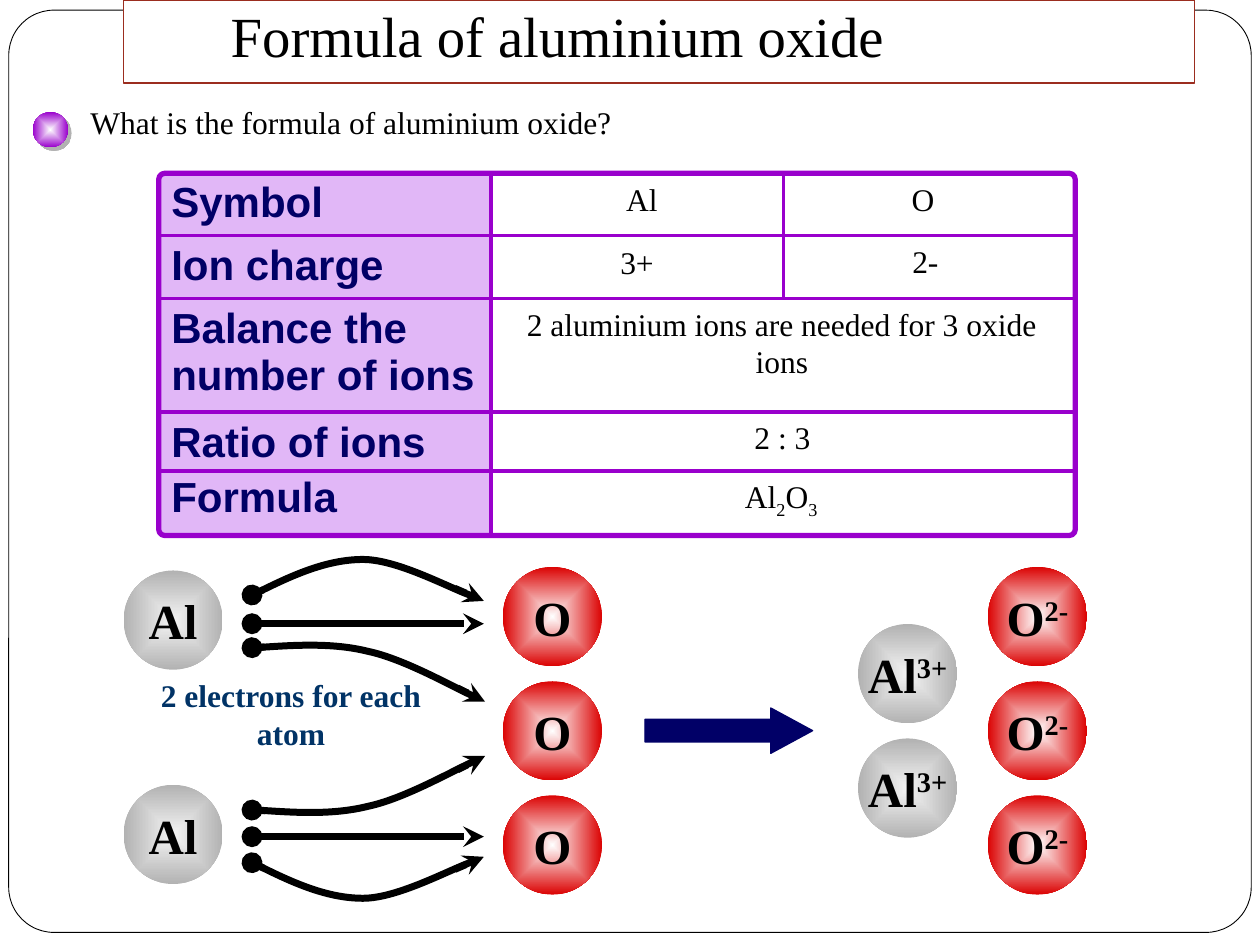
from pptx import Presentation
from pptx.dml.color import RGBColor
from pptx.enum import shapes, text
from pptx.oxml import parse_xml
from pptx.oxml.ns import nsdecls, qn
from pptx.util import Pt

THEME = dict(
    serif="Times New Roman", sans="Arial",
    black="000000", white="FFFFFF", purple="9900CC", lilac="E1B7F7",
    label="010066", arrow="010067", note="013366", title_line="9B2D1F",
    shadow="B2B2B2", red=("FFFFFF", "DB0303"), grey=("F3F3F3", "B2B2B2"),
    bullet=("FFFFFF", "9900CC"),
    title_size=32.4, body_size=18, label_size=24, ion_size=28)

# Content: runs are (text, baseline shift in percent)
TITLE = "Formula of aluminium oxide"
QUESTION = "What is the formula of aluminium oxide?"
NOTE = "2 electrons for each atom"
LABELS = [["Symbol"], ["Ion charge"], ["Balance the number of ions"],
          ["Ratio of ions", "Formula"]]
ROW_HEIGHTS = [36, 36, 65, 70]
VALUES = [  # runs, left, top, width, height
    ([("Al", 0)], 339.8, 99.4, 54, 36),
    ([("O", 0)], 500.4, 99.4, 54, 36),
    ([("3+", 0)], 337, 135.4, 54, 36),
    ([("2-", 0)], 501.8, 134.6, 54, 36),
    ([("2 aluminium ions are needed for 3 oxide ions", 0)],
     287.3, 170.6, 319, 64.8),
    ([("2 : 3", 0)], 407.5, 235.4, 79.2, 36),
    ([("Al", 0), ("2", -25), ("O", 0), ("3", -25)], 406.8, 269.3, 79.2, 36),
]
O_TOPS = [324, 389.3, 454.5]
BALLS = [  # runs, colours, left, tops
    ([("O", 0)], "red", 287.3, O_TOPS),
    ([("Al", 0)], "grey", 70.6, [326, 448.5]),
    ([("O", 0), ("2-", 30)], "red", 564.5, O_TOPS),
    ([("Al", 0), ("3+", 30)], "grey", 490.3, [356.6, 422]),
]
BALL = 56.7

# Electron paths of the upper atom; the lower atom mirrors them
MIRROR_SUM = 833
ARCS = [
    dict(start=[(144, 340), (150.5, 337)],
         curve=[(146.2, 339.1), (166.3, 329), (186.5, 319.7), (207.4, 319.7),
                (227.5, 319.7), (257, 336.2), (270, 340.6)],
         tip=[(259.9, 336.2), (276.5, 343.4)]),
    dict(start=[(144, 370.1), (151.2, 369.7)],
         curve=[(146.9, 370.1), (168.5, 368.6), (190.1, 367.2), (210.2, 372.2),
                (231.1, 376.6), (258.5, 392.4), (271.4, 398.2)],
         tip=[(261.4, 393.1), (277.2, 401)]),
]
STRAIGHT_YS = [356.4, 478.1]

# Table frame
LEFT, TOP, WIDTH, HEIGHT = 90.7, 99, 523.8, 207
LABEL_W = 190
GRID_YS = [134.6, 170.6, 235.4, 269.3]
MID_X = 447.8


def rgb(name):
    return RGBColor.from_string(THEME[name])


def write(p, runs, size, font="serif", color="black", bold=False, align="CENTER"):
    p.alignment = getattr(text.PP_ALIGN, align)
    for words, shift in runs:
        r = p.add_run()
        r.text = words
        for key, value in dict(size=Pt(size), name=THEME[font], bold=bold).items():
            setattr(r.font, key, value)
        r.font.color.rgb = rgb(color)
        if shift:
            r.font._element.set("baseline", str(shift * 1000))


def add_text(s, runs, left, top, width, height, **style):
    tf = s.shapes.add_textbox(Pt(left), Pt(top), Pt(width), Pt(height)).text_frame
    tf.word_wrap = True
    write(tf.paragraphs[0], runs, THEME["body_size"], **style)


def outline(sp, color, width):
    sp.line.color.rgb = rgb(color)
    sp.line.width = Pt(width)


def add_shape(s, kind, left, top, width, height, fill=None, line=None, adj=()):
    sp = s.shapes.add_shape(getattr(shapes.MSO_SHAPE, kind),
                            Pt(left), Pt(top), Pt(width), Pt(height))
    sp.shadow.inherit = False
    for i, value in enumerate(adj):
        sp.adjustments[i] = value
    if fill:
        sp.fill.solid()
        sp.fill.fore_color.rgb = rgb(fill)
    else:
        sp.fill.background()
    if line:
        outline(sp, *line)
    else:
        sp.line.fill.background()
    return sp


def add_ball(s, colors, left, top, size):
    sp = add_shape(s, "OVAL", left, top, size, size)
    inner, outer = THEME[colors]
    gradient = parse_xml(
        f'<a:gradFill {nsdecls("a")} rotWithShape="1"><a:gsLst>'
        f'<a:gs pos="0"><a:srgbClr val="{inner}"/></a:gs>'
        f'<a:gs pos="100000"><a:srgbClr val="{outer}"/></a:gs></a:gsLst>'
        '<a:path path="shape"><a:fillToRect l="50000" t="50000" r="50000" b="50000"/>'
        '</a:path></a:gradFill>')
    spPr = sp.element.spPr
    spPr.replace(spPr.find(qn("a:noFill")), gradient)
    return sp


def add_line(s, start, end, color, width, **ends):
    c = s.shapes.add_connector(shapes.MSO_CONNECTOR.STRAIGHT,
                               *(Pt(v) for v in (*start, *end)))
    outline(c, color, width)
    spPr = c.element.spPr
    for tag, kind in ends.items():
        spPr.find(qn("a:ln")).append(
            parse_xml(f'<a:{tag} {nsdecls("a")} type="{kind}"/>'))
    spPr.append(parse_xml(f'<a:effectLst {nsdecls("a")}/>'))


def add_curve(s, points):
    first, *rest = [(Pt(x), Pt(y)) for x, y in points]
    builder = s.shapes.build_freeform(*first)
    builder.add_line_segments(rest, close=False)
    sp = builder.convert_to_shape()
    sp.shadow.inherit = False
    sp.fill.background()
    outline(sp, "black", 4)
    # Turn each three line segments into one Bezier segment
    segments = list(sp.element.iter(qn("a:lnTo")))
    for i in range(0, len(segments), 3):
        bezier = parse_xml(f'<a:cubicBezTo {nsdecls("a")}/>')
        segments[i].addprevious(bezier)
        for seg in segments[i:i + 3]:
            bezier.append(seg[0])
            seg.getparent().remove(seg)


def main():
    prs = Presentation()
    prs.slide_width, prs.slide_height = Pt(720), Pt(540)
    s = prs.slides.add_slide(prs.slide_layouts[5])

    # Title over the page frame
    title = s.shapes.title
    page = add_shape(s, "ROUNDED_RECTANGLE", 5, 5.8, 710, 527, "white",
                     ("black", 0.5), [0.049])
    title.element.addprevious(page.element)
    for key, value in dict(left=70.6, top=0, width=612, height=47.5).items():
        setattr(title, key, Pt(value))
    title.fill.solid()
    title.fill.fore_color.rgb = rgb("white")
    outline(title, "title_line", 1)
    tf = title.text_frame
    for key, value in dict(auto_size=text.MSO_AUTO_SIZE.NONE, word_wrap=True,
                           vertical_anchor=text.MSO_ANCHOR.BOTTOM,
                           margin_bottom=Pt(8)).items():
        setattr(tf, key, value)
    p = tf.paragraphs[0]
    write(p, [(TITLE, 0)], THEME["title_size"], align="LEFT")
    pPr = p._p.get_or_add_pPr()
    pPr.set("marL", str(Pt(54)))
    pPr.set("indent", "0")

    # Question and its bullet
    add_text(s, [(QUESTION, 0)], 44.6, 55.4, 661, 36, align="LEFT")
    bullet = add_ball(s, "bullet", 18.7, 64, 20.2)
    bullet.element.spPr.find(qn("a:effectLst")).append(parse_xml(
        f'<a:outerShdw {nsdecls("a")} dist="35921" dir="2700000" algn="ctr" '
        f'rotWithShape="0"><a:srgbClr val="{THEME["shadow"]}"/></a:outerShdw>'))

    # Table frame and rules
    split = LEFT + LABEL_W
    add_shape(s, "RECTANGLE", LEFT, TOP, LABEL_W, HEIGHT, "lilac")
    add_shape(s, "ROUNDED_RECTANGLE", LEFT, TOP, WIDTH, HEIGHT,
              line=("purple", 3), adj=[0.017])
    rules = [((LEFT, y), (LEFT + WIDTH, y)) for y in GRID_YS]
    rules += [((split, TOP), (split, TOP + HEIGHT)),
              ((MID_X, TOP), (MID_X, GRID_YS[1]))]
    for start, end in rules:
        add_line(s, start, end, "purple", 2)

    # Row labels and values
    table = s.shapes.add_table(len(LABELS), 1, Pt(LEFT), Pt(TOP), Pt(LABEL_W),
                               Pt(HEIGHT)).table
    table.first_row = table.horz_banding = False
    style = next(table._tbl.iter(qn("a:tableStyleId")))
    style.text = "{2D5ABB26-0587-4C30-8999-92F81FD0307C}"
    for i, (lines, height) in enumerate(zip(LABELS, ROW_HEIGHTS)):
        table.rows[i].height = Pt(height)
        cell = table.cell(i, 0)
        cell.fill.background()
        for j, words in enumerate(lines):
            p = cell.text_frame.add_paragraph() if j else cell.text_frame.paragraphs[0]
            p.space_before = Pt(4.8 if j else 0)
            write(p, [(words, 0)], THEME["label_size"], "sans", "label", True, "LEFT")
    for value in VALUES:
        add_text(s, *value)

    # Atoms and ions
    for runs, colors, left, tops in BALLS:
        for top in tops:
            tf = add_ball(s, colors, left, top, BALL).text_frame
            tf.word_wrap = False
            tf.vertical_anchor = text.MSO_ANCHOR.MIDDLE
            write(tf.paragraphs[0], runs, THEME["ion_size"], bold=True)
    add_text(s, [(NOTE, 0)], 72.7, 383, 187.2, 64.8, color="note", bold=True)

    # Electron transfer arrows
    for mirrored in (False, True):
        for arc in ARCS:
            parts = {name: [(x, MIRROR_SUM - y if mirrored else y) for x, y in pts]
                     for name, pts in arc.items()}
            add_line(s, *parts["start"], "black", 4, headEnd="oval")
            add_curve(s, parts["curve"])
            add_line(s, *parts["tip"], "black", 4, tailEnd="stealth")
    for y in STRAIGHT_YS:
        add_line(s, (144, y), (276.5, y), "black", 4, headEnd="oval", tailEnd="stealth")

    # Reaction arrow
    add_shape(s, "RIGHT_ARROW", 368.6, 404.6, 95.8, 25.9, "arrow",
              ("arrow", 0.75), [0.5, 0.923])
    prs.save("out.pptx")


if __name__ == "__main__":
    main()
